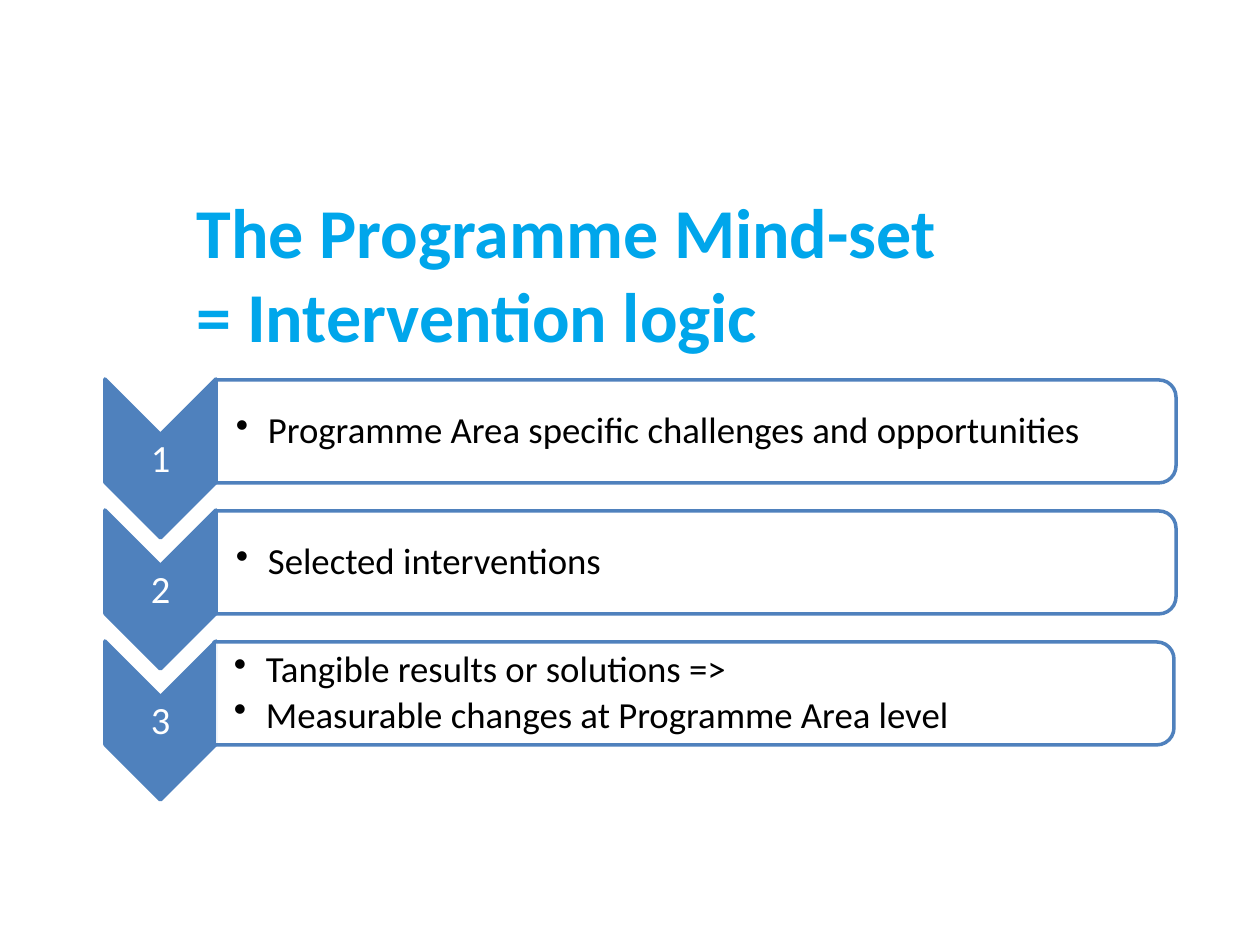
from dataclasses import dataclass

from lxml import etree
from pptx import Presentation, util as u
from pptx.dml.color import RGBColor
from pptx.enum import shapes, text
from pptx.oxml import ns

EMU_PER_PX = 914400 / 126


def px(length):
    return u.Emu(round(length * EMU_PER_PX))


@dataclass(frozen=True)
class Theme:
    font: str = "Calibri"
    title: str = "00A6EB"
    accent: str = "4F81BD"
    white: str = "FFFFFF"
    black: str = "000000"
    title_size: int = 40
    number_size: int = 22
    body_size: int = 21
    line_width: int = 2


class SlideBuilder:
    def __init__(self, slide, theme):
        self.slide = slide
        self.theme = theme
        self.group = slide.shapes.add_group_shape()

    def style(self, paragraph, size, color, bold=False):
        for run in paragraph.runs:
            run.font.name = self.theme.font
            run.font.size = u.Pt(size)
            run.font.bold = bold
            run.font.color.rgb = RGBColor.from_string(color)

    def title(self, wording, left, top, width, height):
        shape = self.slide.shapes.title
        shape.left, shape.top, shape.width, shape.height = map(px, (left, top, width, height))
        frame = shape.text_frame
        frame.text = wording
        frame.auto_size = text.MSO_AUTO_SIZE.SHAPE_TO_FIT_TEXT
        frame.vertical_anchor = text.MSO_ANCHOR.MIDDLE
        frame.paragraphs[0].alignment = text.PP_ALIGN.LEFT
        self.style(frame.paragraphs[0], self.theme.title_size, self.theme.title, bold=True)

    def turned_shape(self, kind, left, top, width, height, fill, alpha=None):
        """Place a shape turned by 90 degrees so that it covers the given area."""
        turned_left = left + (width - height) / 2
        turned_top = top + (height - width) / 2
        shape = self.group.shapes.add_shape(
            kind, *map(px, (turned_left, turned_top, height, width)))
        shape.rotation = 90
        shape.shadow.inherit = False
        shape.fill.solid()
        shape.fill.fore_color.rgb = RGBColor.from_string(fill)
        shape.line.color.rgb = RGBColor.from_string(self.theme.accent)
        shape.line.width = u.Pt(self.theme.line_width)
        if alpha is not None:
            color = shape.fill._xPr.find(".//" + ns.qn("a:srgbClr"))
            etree.SubElement(color, ns.qn("a:alpha"), val=str(alpha * 1000))

    def text_box(self, lines, left, top, width, height, size, color,
                 margins, space_after, bulleted=False):
        box = self.group.shapes.add_textbox(*map(px, (left, top, width, height)))
        frame = box.text_frame
        frame.text = "\n".join(lines)
        frame.word_wrap = True
        frame.vertical_anchor = text.MSO_ANCHOR.MIDDLE
        frame.margin_left, other = map(px, margins)
        frame.margin_top = frame.margin_right = frame.margin_bottom = other
        for paragraph in frame.paragraphs:
            paragraph.line_spacing = 0.9
            paragraph.space_after = u.Pt(space_after * size)
            if bulleted:
                self.bullet(paragraph)
            else:
                paragraph.alignment = text.PP_ALIGN.CENTER
            self.style(paragraph, size, color)

    def bullet(self, paragraph):
        paragraph.level = 1
        properties = paragraph._p.get_or_add_pPr()
        properties.set("marL", str(px(32)))
        properties.set("indent", str(-px(32)))
        etree.SubElement(properties, ns.qn("a:buChar"), char="•")

    def step(self, number, lines, top, bar_left):
        theme = self.theme
        # Numbered chevron
        self.turned_shape(shapes.MSO_SHAPE.CHEVRON, 105, top, 111, 159, theme.accent)
        self.text_box([str(number)], 105, top + 57, 111, 48, theme.number_size,
                      theme.white, margins=(2, 2), space_after=0.35)
        # Bar with its bullets
        self.turned_shape(shapes.MSO_SHAPE.ROUND_2_SAME_RECTANGLE,
                          bar_left, top + 1, 960, 103, theme.white, alpha=90)
        self.text_box(lines, bar_left, top + 6, 955, 93, theme.body_size,
                      theme.black, margins=(20, 1), space_after=0.15, bulleted=True)


def main():
    presentation = Presentation()
    presentation.slide_width, presentation.slide_height = u.Inches(10), u.Inches(7.5)
    slide = presentation.slides.add_slide(presentation.slide_layouts.get_by_name("Title Only"))
    builder = SlideBuilder(slide, Theme())

    # Title
    builder.title("The Programme Mind-set\v= Intervention logic", 184, 181, 893, 183)

    # Steps: lines of text and left edge of the bar
    steps = [
        (["Programme Area specific challenges and opportunities"], 216),
        (["Selected interventions"], 216),
        (["Tangible results or solutions =>",
          "Measurable changes at Programme Area level"], 214),
    ]
    for index, (lines, bar_left) in enumerate(steps):
        builder.step(index + 1, lines, 379 + 131 * index, bar_left)

    presentation.save("out.pptx")


if __name__ == "__main__":
    main()
